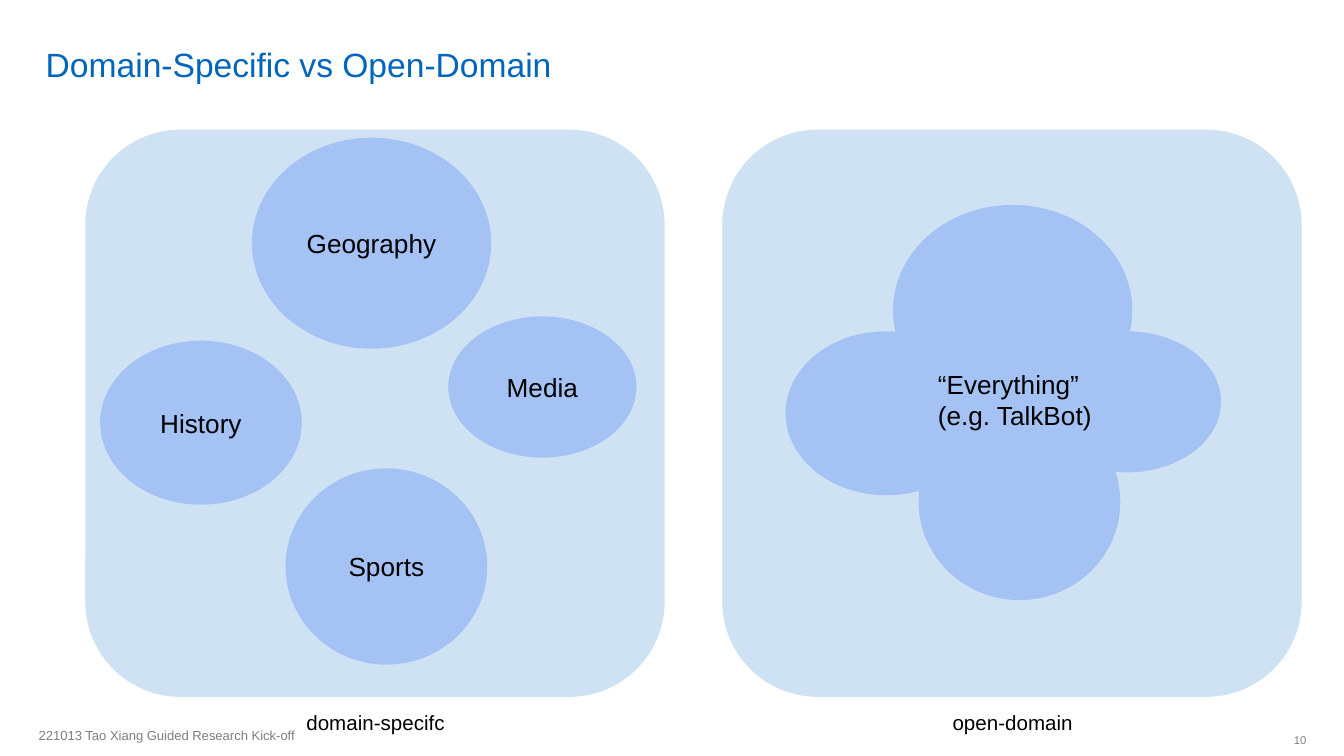
from pptx import Presentation
from pptx import util as u
from pptx.dml import color
from pptx.enum import shapes, text

COLORS = {
    "title": "0065BD",
    "panel": "CFE2F3",
    "domain": "A4C2F4",
    "body": "000000",
    "footer": "7F7F7F",
}
ALIGN = text.PP_ALIGN
ANCHOR = text.MSO_ANCHOR
SHAPE = shapes.MSO_SHAPE

SLIDE_WIDTH = 10
SLIDE_HEIGHT = SLIDE_WIDTH * 9 / 16
PANEL_TOP, PANEL_WIDTH, PANEL_HEIGHT = 0.97, 4.3, 4.21
SIZES = {
    "Geography": (1.77, 1.56),
    "History": (1.49, 1.21),
    "Media": (1.39, 1.04),
    "Sports": (1.49, 1.45),
}
SEPARATE = {
    "Geography": (1.88, 1.03),
    "History": (0.75, 2.54),
    "Media": (3.34, 2.36),
    "Sports": (2.13, 3.49),
}
MERGED = {
    "Geography": (6.65, 1.53),
    "History": (5.85, 2.47),
    "Media": (7.69, 2.47),
    "Sports": (6.84, 3.01),
}


def rgb(name):
    return color.RGBColor.from_string(COLORS[name])


def inches(*lengths):
    return [u.Inches(length) for length in lengths]


def write(frame, lines, size, ink="body", align=ALIGN.LEFT, anchor=ANCHOR.TOP,
          insets=(0.1, 0.1, 0.1, 0.1), spacing=None):
    left, top, right, bottom = inches(*insets)
    frame_format = {
        "word_wrap": True,
        "vertical_anchor": anchor,
        "margin_left": left,
        "margin_top": top,
        "margin_right": right,
        "margin_bottom": bottom,
    }
    for name, value in frame_format.items():
        setattr(frame, name, value)
    font_format = {"name": "Arial", "size": u.Pt(size)}
    for index, line in enumerate(lines):
        paragraph = frame.add_paragraph() if index else frame.paragraphs[0]
        paragraph.alignment = align
        paragraph.line_spacing = spacing
        run = paragraph.add_run()
        run.text = line
        for name, value in font_format.items():
            setattr(run.font, name, value)
        run.font.color.rgb = rgb(ink)


def add_label(slide, box, lines, size, **style):
    label = slide.shapes.add_textbox(*inches(*box))
    write(label.text_frame, lines, size, **style)


def add_filled(group, kind, box, fill):
    filled = group.shapes.add_shape(kind, *inches(*box))
    filled.shadow.inherit = False
    filled.fill.solid()
    filled.fill.fore_color.rgb = rgb(fill)
    filled.line.color.rgb = rgb(fill)
    filled.line.width = u.Pt(0.75)
    return filled


def add_panel(slide, left, places, caption, caption_left, named):
    group = slide.shapes.add_group_shape()
    panel_box = (left, PANEL_TOP, PANEL_WIDTH, PANEL_HEIGHT)
    panel = add_filled(group, SHAPE.ROUNDED_RECTANGLE, panel_box, "panel")
    panel.adjustments[0] = 0.167
    for domain, place in places.items():
        oval = add_filled(group, SHAPE.OVAL, place + SIZES[domain], "domain")
        if named:
            write(oval.text_frame, [domain], 14,
                  align=ALIGN.CENTER, anchor=ANCHOR.MIDDLE)
    add_label(slide, (caption_left, 5.19, 1.75, 0.39), [caption], 11,
              align=ALIGN.CENTER)


def main():
    deck = Presentation()
    deck.slide_width, deck.slide_height = inches(SLIDE_WIDTH, SLIDE_HEIGHT)
    slide = deck.slides.add_slide(deck.slide_layouts[6])

    add_label(slide, (0.27, 0.04, 8.68, 0.59), ["Domain-Specific vs Open-Domain"],
              18, ink="title", anchor=ANCHOR.BOTTOM,
              insets=(0.07, 0, 0.07, 0), spacing=0.9)
    add_panel(slide, 0.64, SEPARATE, "domain-specifc", 1.92, named=True)
    add_panel(slide, 5.38, MERGED, "open-domain", 6.66, named=False)
    add_label(slide, (6.88, 2.64, 1.53, 0.67),
              ["“Everything”", "(e.g. TalkBot)"], 14)
    add_label(slide, (0.19, 5.31, 6.3, 0.32),
              ["221013 Tao Xiang Guided Research Kick-off"], 7, ink="footer",
              anchor=ANCHOR.MIDDLE, insets=(0.1, 0.05, 0.1, 0.05))
    add_label(slide, (9.45, 5.39, 0.27, 0.24), ["10"], 6, ink="footer",
              align=ALIGN.RIGHT, anchor=ANCHOR.MIDDLE,
              insets=(0.07, 0.04, 0, 0.04))

    deck.save("out.pptx")


if __name__ == "__main__":
    main()
